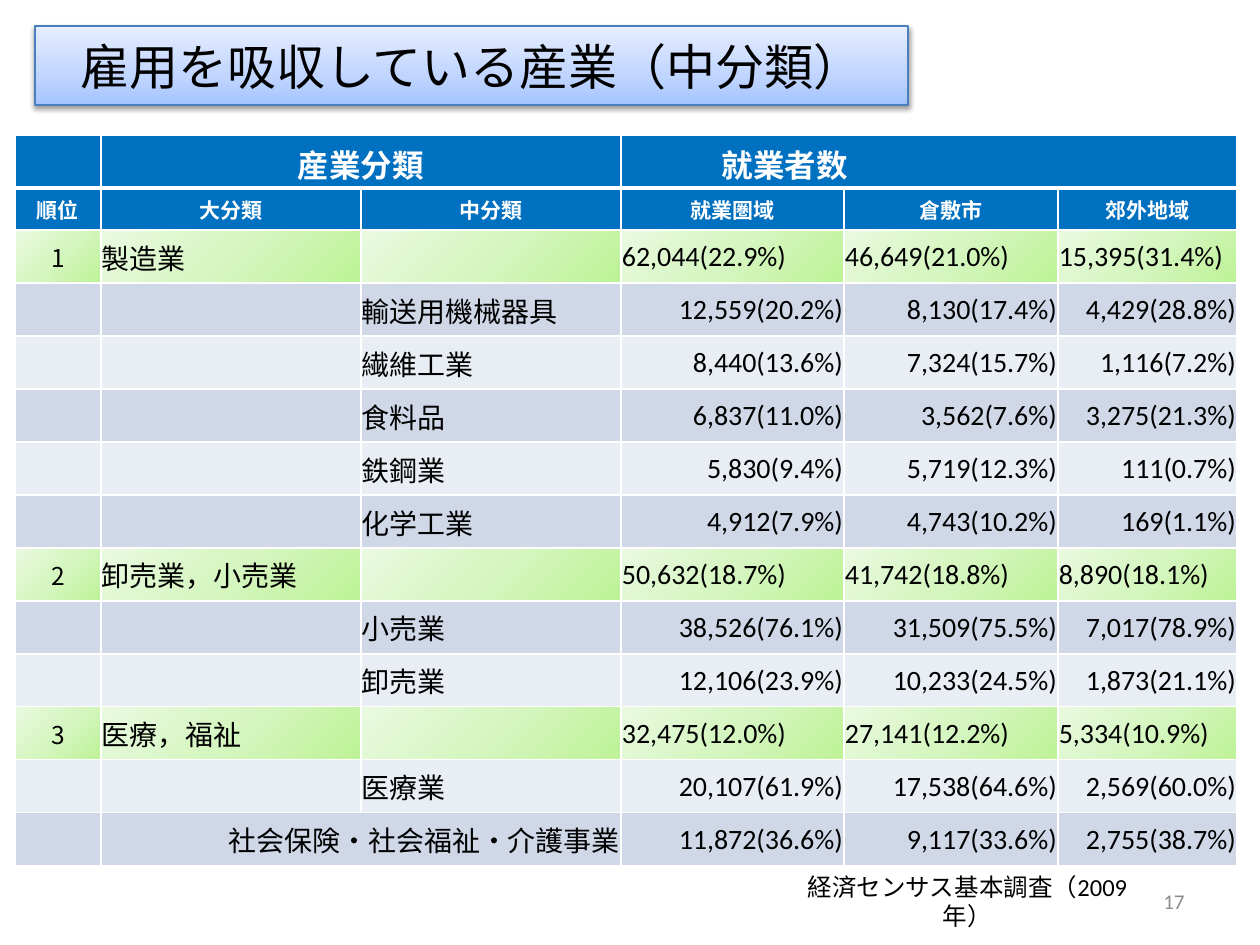
import pptx
import pptx.util
import pptx.dml.color
import pptx.enum.shapes
import pptx.enum.text
import pptx.oxml
import pptx.oxml.ns

ALIGN = pptx.enum.text.PP_ALIGN
MIDDLE = pptx.enum.text.MSO_ANCHOR.MIDDLE
LATIN, JAPANESE = "Calibri", "Noto Sans CJK JP"

TITLE = "雇用を吸収している産業（中分類）"
SOURCE = "経済センサス基本調査（2009年）"
PAGE_NUMBER = "17"
GROUP_HEADERS = ["", "産業分類", "", "就業者数", "", ""]
HEADERS = ["順位", "大分類", "中分類", "就業圏域", "倉敷市", "郊外地域"]
INDUSTRIES = [
    ("1", "製造業", "", "62,044(22.9%)", "46,649(21.0%)", "15,395(31.4%)"),
    ("", "", "輸送用機械器具", "12,559(20.2%)", "8,130(17.4%)", "4,429(28.8%)"),
    ("", "", "繊維工業", "8,440(13.6%)", "7,324(15.7%)", "1,116(7.2%)"),
    ("", "", "食料品", "6,837(11.0%)", "3,562(7.6%)", "3,275(21.3%)"),
    ("", "", "鉄鋼業", "5,830(9.4%)", "5,719(12.3%)", "111(0.7%)"),
    ("", "", "化学工業", "4,912(7.9%)", "4,743(10.2%)", "169(1.1%)"),
    ("2", "卸売業，小売業", "", "50,632(18.7%)", "41,742(18.8%)", "8,890(18.1%)"),
    ("", "", "小売業", "38,526(76.1%)", "31,509(75.5%)", "7,017(78.9%)"),
    ("", "", "卸売業", "12,106(23.9%)", "10,233(24.5%)", "1,873(21.1%)"),
    ("3", "医療，福祉", "", "32,475(12.0%)", "27,141(12.2%)", "5,334(10.9%)"),
    ("", "", "医療業", "20,107(61.9%)", "17,538(64.6%)", "2,569(60.0%)"),
    ("", "社会保険・社会福祉・介護事業", "", "11,872(36.6%)", "9,117(33.6%)", "2,755(38.7%)"),
]
COLUMN_WIDTHS = [86, 260, 260, 223, 214, 179]
ROW_HEIGHT, HEADER_HEIGHT = 53, 42
HEADER_FILL = "0070C0"
BAND_FILLS = ["E9EDF4", "D0D8E8"]
TITLE_STOPS = [(0, "A4C4FF"), (35, "BFD4FF"), (100, "E6EEFF")]
RANK_STOPS = [(0, "BEF297"), (50, "D5F6C0"), (100, "EAFAE0")]


def px(length):
    return pptx.util.Emu(round(length * 914400 / 126))


def colour(hex_string):
    return pptx.dml.color.RGBColor.from_string(hex_string)


def drawing_xml(markup):
    """Parse one element, its first tag carrying the a: namespace."""
    tag, rest = markup.split(" ", 1)
    return pptx.oxml.parse_xml(f"{tag} {pptx.oxml.ns.nsdecls('a')} {rest}")


def paint_gradient(fill, element, stops, angle):
    """Angle runs counter-clockwise, in degrees."""
    fill.gradient()
    fill.gradient_angle = angle
    stop_list = element.xpath(".//a:gsLst")[0]
    for stop in list(stop_list):
        stop_list.remove(stop)
    for position, hex_string in stops:
        stop_list.append(drawing_xml(
            f'<a:gs pos="{position * 1000}"><a:srgbClr val="{hex_string}"/></a:gs>'))


def write(frame, text, size, hex_string, align, font=LATIN, bold=False):
    frame.text = text
    paragraph = frame.paragraphs[0]
    paragraph.alignment = align
    for run in paragraph.runs:
        run.font.size = pptx.util.Pt(size)
        run.font.name = font
        run.font.bold = bold
        run.font.color.rgb = colour(hex_string)
        run.font._element.find(pptx.oxml.ns.qn("a:latin")).addnext(
            drawing_xml(f'<a:ea typeface="{JAPANESE}"/>'))


def add_borders(cell, row):
    properties = cell._tc.get_or_add_tcPr()
    widths = {"L": 1, "R": 1, "T": 3 if row == 1 else 1, "B": 3 if row == 0 else 1}
    for side, points in widths.items():
        properties.append(drawing_xml(
            f'<a:ln{side} w="{points * 12700}"><a:solidFill>'
            f'<a:srgbClr val="FFFFFF"/></a:solidFill></a:ln{side}>'))


def fill_solid(fill, hex_string):
    fill.solid()
    fill.fore_color.rgb = colour(hex_string)


def format_title(title):
    title.left, title.top, title.width, title.height = px(35), px(26), px(873), px(79)
    paint_gradient(title.fill, title._element, TITLE_STOPS, 90)
    title.line.color.rgb = colour("4B7EBC")
    title.line.width = pptx.util.Pt(0.75)
    title._element.spPr.append(drawing_xml(
        '<a:effectLst ><a:outerShdw blurRad="39370" dist="20320" dir="5400000" rotWithShape="0">'
        '<a:srgbClr val="000000"><a:alpha val="38000"/></a:srgbClr>'
        '</a:outerShdw></a:effectLst>'))
    title.text_frame.vertical_anchor = MIDDLE
    write(title.text_frame, TITLE, 28, "000000", ALIGN.CENTER)


def format_body_cell(cell, text, column, ranked, merged):
    cell.margin_left = cell.margin_right = cell.margin_top = px(1)
    cell.margin_bottom = 0
    cell.vertical_anchor = MIDDLE
    if column == 0:
        align = ALIGN.CENTER
    elif merged or (column > 2 and not ranked):
        align = ALIGN.RIGHT
    else:
        align = ALIGN.LEFT
    write(cell.text_frame, text, 14 if column == 0 else 16, "000000", align,
          JAPANESE if column < 3 else LATIN)


def add_industry_table(slide):
    rows = [GROUP_HEADERS, HEADERS, *INDUSTRIES]
    heights = [HEADER_HEIGHT if row is HEADERS else ROW_HEIGHT for row in rows]
    table = slide.shapes.add_table(
        len(rows), len(COLUMN_WIDTHS), px(15), px(135),
        px(sum(COLUMN_WIDTHS)), px(sum(heights))).table
    table.first_row = table.horz_banding = False
    for column, width in zip(table.columns, COLUMN_WIDTHS):
        column.width = px(width)
    for table_row, height in zip(table.rows, heights):
        table_row.height = px(height)

    last = len(rows) - 1
    for row, texts in enumerate(rows):
        ranked = row > 1 and texts[0] != ""
        for column, text in enumerate(texts):
            cell = table.cell(row, column)
            add_borders(cell, row)
            if row < 2:
                fill_solid(cell.fill, HEADER_FILL)
                write(cell.text_frame, text, 12 if row else 18, "FFFFFF", ALIGN.CENTER,
                      JAPANESE if row else LATIN, bold=True)
                continue
            if ranked:
                paint_gradient(cell.fill, cell._tc, RANK_STOPS, 135)
            else:
                fill_solid(cell.fill, BAND_FILLS[row % 2])
            format_body_cell(cell, text, column, ranked, row == last and column == 1)

    for row, first, final in [(0, 1, 2), (0, 3, 5), (last, 1, 2)]:
        table.cell(row, first).merge(table.cell(row, final))
    table.cell(0, 3).margin_right = px(301)


def main():
    presentation = pptx.Presentation()
    presentation.slide_width, presentation.slide_height = px(1260), px(945)
    slide = presentation.slides.add_slide(presentation.slide_layouts[5])
    format_title(slide.shapes.title)

    number = slide.shapes.add_textbox(px(903), px(876), px(294), px(50)).text_frame
    number.word_wrap = True
    number.vertical_anchor = MIDDLE
    write(number, PAGE_NUMBER, 12, "8C8C8C", ALIGN.RIGHT)

    add_industry_table(slide)

    source = slide.shapes.add_shape(
        pptx.enum.shapes.MSO_SHAPE.RECTANGLE, px(779), px(877), px(377), px(49))
    source.shadow.inherit = False
    fill_solid(source.fill, "FFFFFF")
    source.line.fill.background()
    source.text_frame.word_wrap = True
    source.text_frame.vertical_anchor = MIDDLE
    write(source.text_frame, SOURCE, 14, "000000", ALIGN.CENTER)

    presentation.save("out.pptx")


if __name__ == "__main__":
    main()
